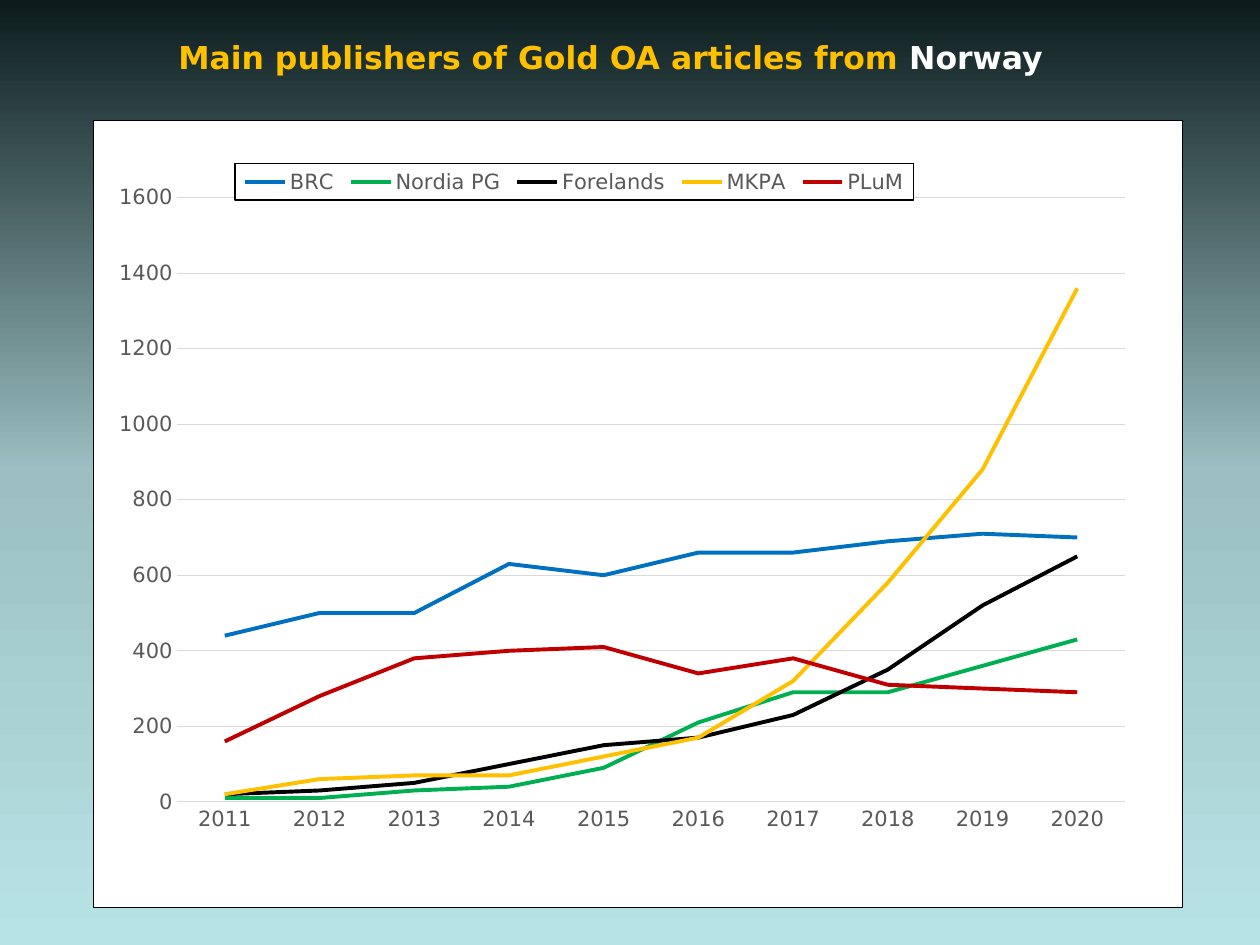
from copy import deepcopy
from lxml.etree import SubElement
from pptx import Presentation
from pptx.chart.data import CategoryChartData
from pptx.dml.color import RGBColor
from pptx.enum.chart import XL_CHART_TYPE, XL_LEGEND_POSITION, XL_TICK_MARK
from pptx.enum.text import MSO_ANCHOR, PP_ALIGN
from pptx.oxml import parse_xml
from pptx.oxml.ns import nsdecls, qn
from pptx.util import Emu, Pt

FACE = "DejaVu Sans"
HUES = {
    "night": "0C1C1D", "teal": "9BBFC2", "ice": "B8E3E6",
    "gold": "FFC000", "white": "FFFFFF", "black": "000000",
    "text": "595959", "grid": "D9D9D9",
    "blue": "0070C0", "green": "00B050", "red": "C00000",
}
YEARS = [str(year) for year in range(2011, 2021)]
SERIES = [
    ("BRC", "blue", (440, 500, 500, 630, 600, 660, 660, 690, 710, 700)),
    ("Nordia PG", "green", (10, 10, 30, 40, 90, 210, 290, 290, 360, 430)),
    ("Forelands", "black", (20, 30, 50, 100, 150, 170, 230, 350, 520, 650)),
    ("MKPA", "gold", (20, 60, 70, 70, 120, 170, 320, 580, 880, 1360)),
    ("PLuM", "red", (160, 280, 380, 400, 410, 340, 380, 310, 300, 290)),
]


def px(num):
    """Turn pixels into EMU."""
    return Emu(round(num * 914400 / 126))


def hue(name):
    """Look up a colour."""
    return RGBColor.from_string(HUES[name])


def style(font, size, color, bold=None):
    """Set face, size and colour of a font."""
    font.name, font.size, font.bold = FACE, Pt(size), bold
    font.color.rgb = hue(color)


def paint(slide):
    """Fill the background with a vertical gradient."""
    fill = slide.background.fill
    fill.gradient()
    fill.gradient_angle = 270
    stops = next(slide.element.iter(qn("a:gsLst")))
    stops.insert(1, deepcopy(stops[0]))
    for stop, spot, name in zip(fill.gradient_stops, (0, 0.5, 1), ("night", "teal", "ice")):
        stop.position = spot
        stop.color.rgb = hue(name)


def title(slide, box):
    """Place the two-colour heading in its box."""
    frame = slide.shapes.add_textbox(*map(px, box)).text_frame
    frame.word_wrap = True
    frame.vertical_anchor = MSO_ANCHOR.MIDDLE
    para = frame.paragraphs[0]
    para.alignment = PP_ALIGN.CENTER
    for words, color in (("Main publishers of Gold OA articles from ", "gold"), ("Norway", "white")):
        run = para.add_run()
        run.text = words
        style(run.font, 18, color, True)


def panel():
    """Make a white chart fill with a thin black border."""
    return parse_xml(
        f'<c:spPr {nsdecls("c", "a")}>'
        f'<a:solidFill><a:srgbClr val="{HUES["white"]}"/></a:solidFill>'
        f'<a:ln w="{Pt(0.75)}"><a:solidFill><a:srgbClr val="{HUES["black"]}"/></a:solidFill></a:ln>'
        "</c:spPr>"
    )


def layout(part, index, rect, inner=False):
    """Pin a chart part to fractions of the chart box."""
    for old in part.findall(qn("c:layout")):
        part.remove(old)
    node = parse_xml(f'<c:layout {nsdecls("c")}/>')
    part.insert(index, node)
    hold = SubElement(node, qn("c:manualLayout"))
    pairs = [("layoutTarget", "inner")] if inner else []
    pairs += [("xMode", "edge"), ("yMode", "edge"), *zip("xywh", rect)]
    for tag, val in pairs:
        SubElement(hold, qn(f"c:{tag}")).set("val", str(val))


def axes(chart):
    """Style both axes and the grid."""
    for axis in (chart.category_axis, chart.value_axis):
        axis.major_tick_mark = axis.minor_tick_mark = XL_TICK_MARK.NONE
        style(axis.tick_labels.font, 12, "text")
    chart.value_axis.has_major_gridlines = True
    chart.value_axis.format.line.fill.background()
    grid = chart.value_axis.major_gridlines
    for line in (chart.category_axis.format.line, grid.format.line):
        line.color.rgb = hue("grid")
        line.width = Pt(0.75)


def key(chart):
    """Add the framed legend over the plot."""
    chart.has_legend = True
    legend = chart.legend
    legend.position = XL_LEGEND_POSITION.BOTTOM
    legend.include_in_layout = False
    style(legend.font, 12, "text")
    node = next(chart.element.iter(qn("c:legend")))
    layout(node, 1, (0.13, 0.055, 0.623, 0.046))
    node.find(qn("c:overlay")).addnext(panel())


def graph(slide, box):
    """Draw the line chart in its box."""
    data = CategoryChartData()
    data.categories = YEARS
    for name, _, vals in SERIES:
        data.add_series(name, vals)
    chart = slide.shapes.add_chart(XL_CHART_TYPE.LINE, *map(px, box), data).chart
    chart.has_title = False
    style(chart.font, 10, "black")
    plot = chart.plots[0]
    plot.vary_by_categories = False
    for line, (_, color, _) in zip(plot.series, SERIES):
        line.smooth = False
        line.format.line.color.rgb = hue(color)
        line.format.line.width = Pt(2.25)
    axes(chart)
    key(chart)
    layout(next(chart.element.iter(qn("c:plotArea"))), 0, (0.077, 0.098, 0.87, 0.768), True)
    chart.element.find(qn("c:chart")).addnext(panel())


def main():
    """Build and save the slide."""
    deck = Presentation()
    deck.slide_width, deck.slide_height = px(1260), px(945)
    slide = deck.slides.add_slide(deck.slide_layouts[6])
    paint(slide)
    title(slide, (38, 25, 1145, 63))
    graph(slide, (93, 120, 1090, 788))
    deck.save("out.pptx")


if __name__ == "__main__":
    main()
